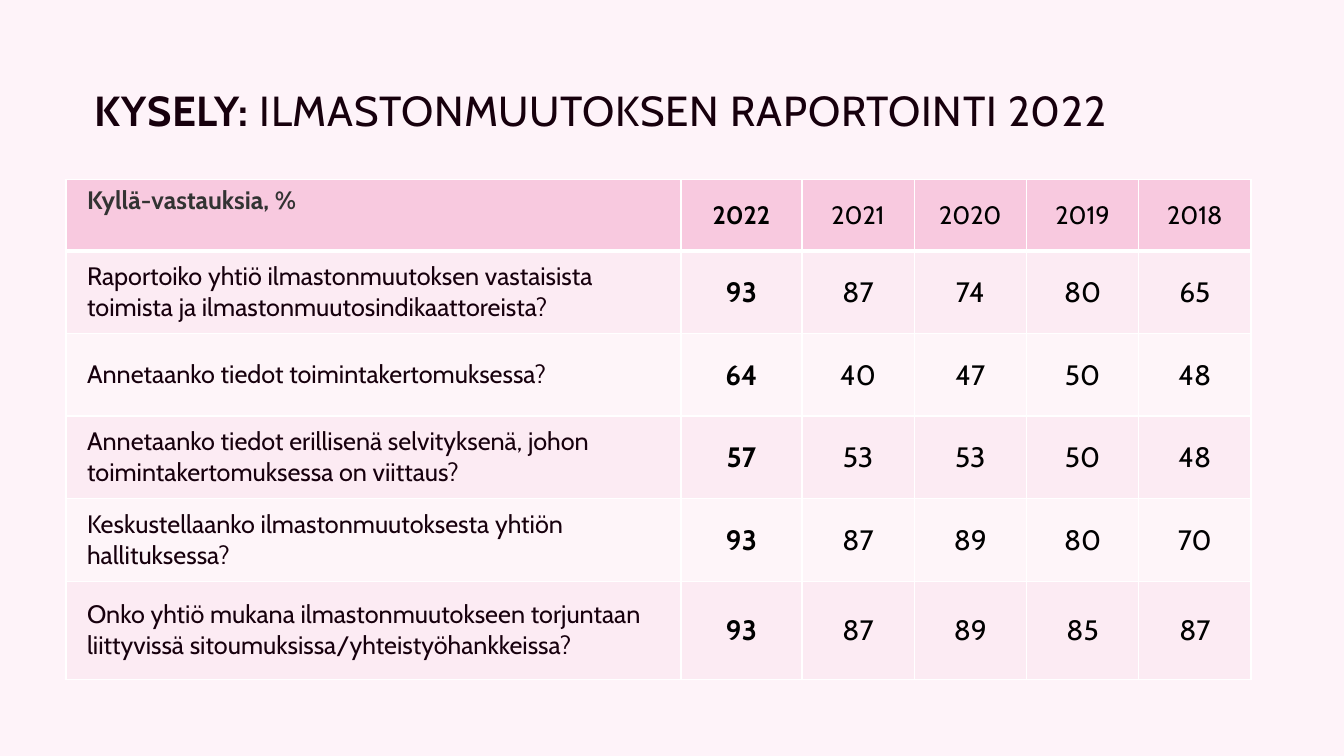
"""Build a slide with a table of yes answers on climate reporting."""
from lxml.etree import SubElement
from pptx import Presentation
from pptx.dml.color import RGBColor
from pptx.enum.text import MSO_ANCHOR, PP_ALIGN
from pptx.oxml.ns import qn
from pptx.util import Pt

HUES = {
    "page": "FEF3F9",
    "plum": "17000D",
    "grey": "333333",
    "black": "000000",
    "white": "FFFFFF",
    "head": "F8C9DF",
    "odd": "FCEBF3",
    "even": "FEF5F9",
}


def hue(name):
    return RGBColor.from_string(HUES[name])


def write(para, text, size=18, color="black", bold=False, align=PP_ALIGN.LEFT):
    para.alignment = align
    run = para.add_run()
    run.text = text
    font = run.font
    font.name, font.size, font.bold = "Cabin", Pt(size), bold
    font.color.rgb = hue(color)
    return run


deck = Presentation()
deck.slide_width, deck.slide_height = Pt(960), Pt(540)
slide = deck.slides.add_slide(deck.slide_layouts[5])
slide.background.fill.solid()
slide.background.fill.fore_color.rgb = hue("page")

title = slide.shapes.title
title.left, title.top, title.width, title.height = Pt(60.5), Pt(28.8), Pt(828), Pt(104.4)
title.text_frame.vertical_anchor = MSO_ANCHOR.MIDDLE
title.text_frame.word_wrap = True
para = title.text_frame.paragraphs[0]
para.line_spacing = 0.9
for text, bold in (("KYSELY:", True), ("\u00a0ILMASTONMUUTOKSEN RAPORTOINTI 2022", False)):
    run = write(para, text, size=30, color="plum", bold=bold)
    run.font._element.set("spc", "50")

ROWS = [
    ("Kyllä-vastauksia, %", 2022, 2021, 2020, 2019, 2018),
    ("Raportoiko yhtiö ilmastonmuutoksen vastaisista toimista ja ilmastonmuutosindikaattoreista?",
     93, 87, 74, 80, 65),
    ("Annetaanko tiedot toimintakertomuksessa?", 64, 40, 47, 50, 48),
    ("Annetaanko tiedot erillisenä selvityksenä, johon toimintakertomuksessa on viittaus?",
     57, 53, 53, 50, 48),
    ("Keskustellaanko ilmastonmuutoksesta yhtiön hallituksessa?", 93, 87, 89, 80, 70),
    ("Onko yhtiö mukana ilmastonmuutokseen torjuntaan liittyvissä sitoumuksissa/yhteistyöhankkeissa?",
     93, 87, 89, 85, 87),
]
WIDTHS = [439.2, 86.4] + [80.2] * 4
HEIGHTS = [50.8] + [59] * 4 + [70]

frame = slide.shapes.add_table(
    len(ROWS), len(WIDTHS), Pt(47.2), Pt(128.4), Pt(sum(WIDTHS)), Pt(sum(HEIGHTS)))
table = frame.table
for col, width in zip(table.columns, WIDTHS):
    col.width = Pt(width)
for row, height in zip(table.rows, HEIGHTS):
    row.height = Pt(height)

for r, row in enumerate(ROWS):
    band = "head" if r == 0 else "odd" if r % 2 else "even"
    for c, value in enumerate(row):
        cell = table.cell(r, c)
        first = c == 0
        side = 15 if first else 0.7
        edge = 0.7 if not first else 3.6 if r == 0 else 2
        cell.margin_left = cell.margin_right = Pt(side)
        cell.margin_top, cell.margin_bottom = Pt(edge), Pt(edge if first else 0)
        top = first and r == 0
        cell.vertical_anchor = MSO_ANCHOR.TOP if top else MSO_ANCHOR.MIDDLE
        props = cell._tc.get_or_add_tcPr()
        for tag in ("lnL", "lnR", "lnT", "lnB"):
            thick = (r, tag) in ((0, "lnB"), (1, "lnT"))
            line = SubElement(props, qn("a:" + tag), w=str(Pt(3 if thick else 1)))
            paint = SubElement(line, qn("a:solidFill"))
            SubElement(paint, qn("a:srgbClr"), val=HUES["white"])
        cell.fill.solid()
        cell.fill.fore_color.rgb = hue(band)
        write(
            cell.text_frame.paragraphs[0], str(value),
            size=18 if first or r == 0 else 20,
            color="grey" if top else "plum" if first else "black",
            bold=top or c == 1,
            align=PP_ALIGN.LEFT if first else PP_ALIGN.CENTER)

deck.save("out.pptx")
